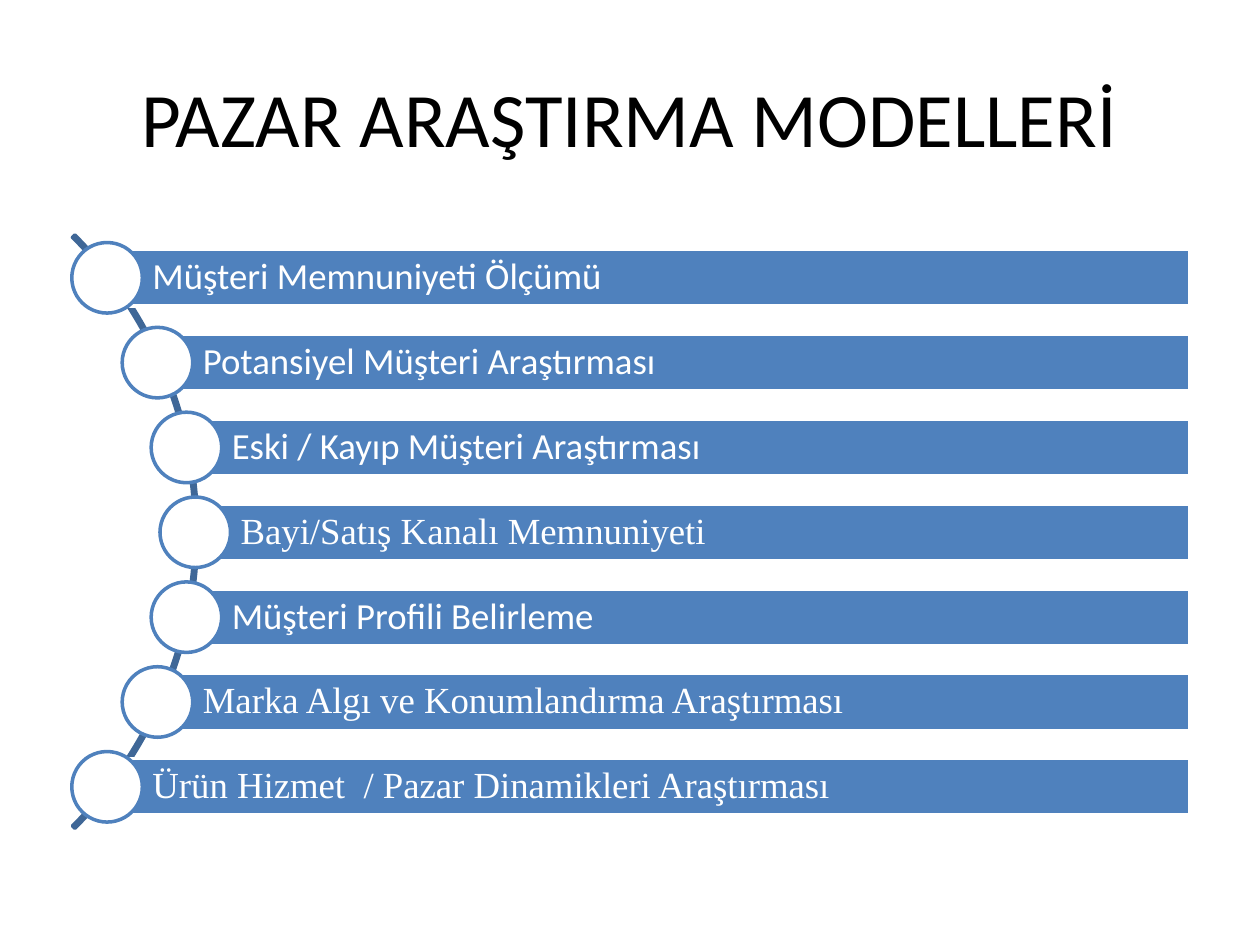
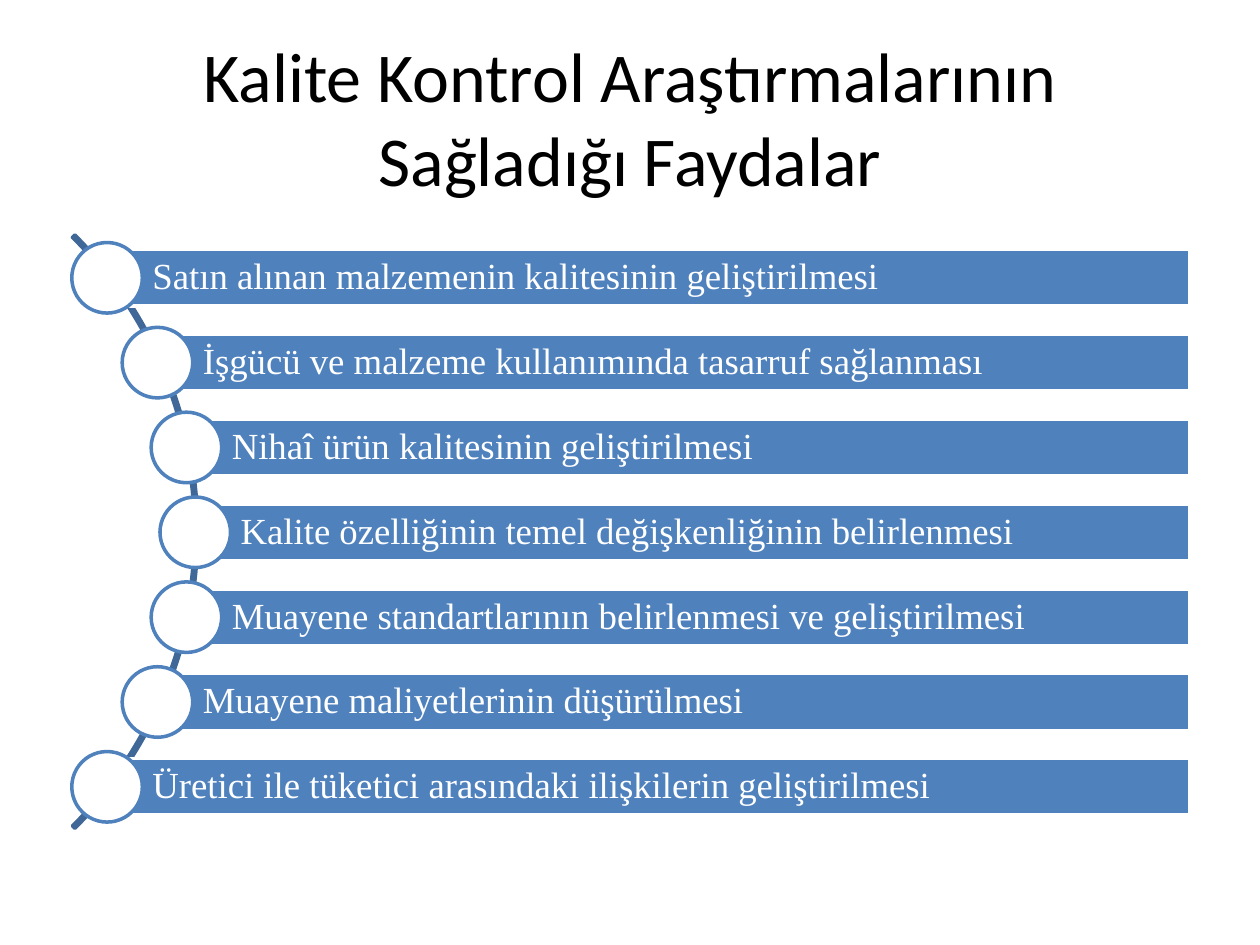
from pptx import Presentation
from pptx.dml.color import RGBColor
from pptx.enum.shapes import MSO_SHAPE
from pptx.enum.text import MSO_ANCHOR, PP_ALIGN
from pptx.util import Inches, Pt

# Content: title, title size, and (label, font) for each step
SANS, SERIF = "Calibri", "Times New Roman"
SLIDES = [
    ("PAZAR ARAŞTIRMA MODELLERİ", 44, [
        ("Müşteri Memnuniyeti Ölçümü", SANS),
        ("Potansiyel Müşteri Araştırması", SANS),
        ("Eski / Kayıp Müşteri Araştırması", SANS),
        ("Bayi/Satış Kanalı Memnuniyeti", SERIF),
        ("Müşteri Profili Belirleme", SANS),
        ("Marka Algı ve Konumlandırma Araştırması", SERIF),
        ("Ürün Hizmet  / Pazar Dinamikleri Araştırması", SERIF),
    ]),
    ("Kalite Kontrol Araştırmalarının Sağladığı Faydalar", 40, [
        ("Satın alınan malzemenin kalitesinin geliştirilmesi", SERIF),
        ("İşgücü ve malzeme kullanımında tasarruf sağlanması", SERIF),
        ("Nihaî ürün kalitesinin geliştirilmesi", SERIF),
        ("Kalite özelliğinin temel değişkenliğinin belirlenmesi", SERIF),
        ("Muayene standartlarının belirlenmesi ve geliştirilmesi", SERIF),
        ("Muayene maliyetlerinin düşürülmesi", SERIF),
        ("Üretici ile tüketici arasındaki ilişkilerin geliştirilmesi", SERIF),
    ]),
]

# Shared look
BLACK = RGBColor(0x00, 0x00, 0x00)
WHITE = RGBColor(0xFF, 0xFF, 0xFF)
BLUE = RGBColor(0x4F, 0x81, 0xBD)
DARK_BLUE = RGBColor(0x3F, 0x67, 0x97)

# Shared geometry, in inches; bars start where the arc passes, mirrored top to bottom
UPPER_STARTS = [0.85, 1.25, 1.48]
BAR_STARTS = UPPER_STARTS + [1.55] + UPPER_STARTS[::-1]
BAR_RIGHT, BAR_HEIGHT = 9.44, 0.45
FIRST_TOP, LAST_TOP = 1.98, 6.02
PITCH = (LAST_TOP - FIRST_TOP) / (len(BAR_STARTS) - 1)
CIRCLE = 0.56
BAR_FRAME = {
    "margin_left": Inches(0.36), "margin_right": Inches(0.06),
    "margin_top": Inches(0.06), "margin_bottom": Inches(0.06),
    "vertical_anchor": MSO_ANCHOR.MIDDLE, "word_wrap": True,
}


def set_font(paragraph, name, size, color):
    paragraph.font.name = name
    paragraph.font.size = Pt(size)
    paragraph.font.color.rgb = color


def add_shape(slide, kind, box, line, fill=None):
    shape = slide.shapes.add_shape(kind, *(Inches(length) for length in box))
    shape.shadow.inherit = False
    if fill is None:
        shape.fill.background()
    else:
        shape.fill.solid()
        shape.fill.fore_color.rgb = fill
    shape.line.color.rgb = line
    shape.line.width = Pt(2)
    return shape


def add_title(slide, text, size):
    title = slide.shapes.title
    title.left, title.top = Inches(0.5), Inches(0.3)
    title.width, title.height = Inches(9), Inches(1.25)
    title.text_frame.text = text
    title.text_frame.vertical_anchor = MSO_ANCHOR.MIDDLE
    paragraph = title.text_frame.paragraphs[0]
    paragraph.alignment = PP_ALIGN.CENTER
    set_font(paragraph, SANS, size, BLACK)


def add_arc(slide):
    arc = add_shape(slide, MSO_SHAPE.BLOCK_ARC, (-5.09, 0.89, 6.66, 6.66), DARK_BLUE)
    for index, value in enumerate((189, 27, 0.004)):
        arc.adjustments[index] = value


def add_step(slide, left, top, label, font):
    bar_box = (left, top, BAR_RIGHT - left, BAR_HEIGHT)
    bar = add_shape(slide, MSO_SHAPE.RECTANGLE, bar_box, WHITE, BLUE)
    for name, value in BAR_FRAME.items():
        setattr(bar.text_frame, name, value)
    paragraph = bar.text_frame.paragraphs[0]
    paragraph.text = label
    paragraph.alignment = PP_ALIGN.LEFT
    paragraph.line_spacing = 0.9
    set_font(paragraph, font, 21, WHITE)

    # The circle is centred on the left end of its bar
    circle_box = (left - CIRCLE / 2, top + (BAR_HEIGHT - CIRCLE) / 2, CIRCLE, CIRCLE)
    add_shape(slide, MSO_SHAPE.OVAL, circle_box, BLUE, WHITE)


def main():
    presentation = Presentation()
    presentation.slide_width = Inches(10)
    presentation.slide_height = Inches(7.5)
    title_only = presentation.slide_layouts[5]
    for title, size, steps in SLIDES:
        slide = presentation.slides.add_slide(title_only)
        add_title(slide, title, size)
        add_arc(slide)
        for index, (left, (label, font)) in enumerate(zip(BAR_STARTS, steps)):
            add_step(slide, left, FIRST_TOP + index * PITCH, label, font)
    presentation.save("out.pptx")


if __name__ == "__main__":
    main()
